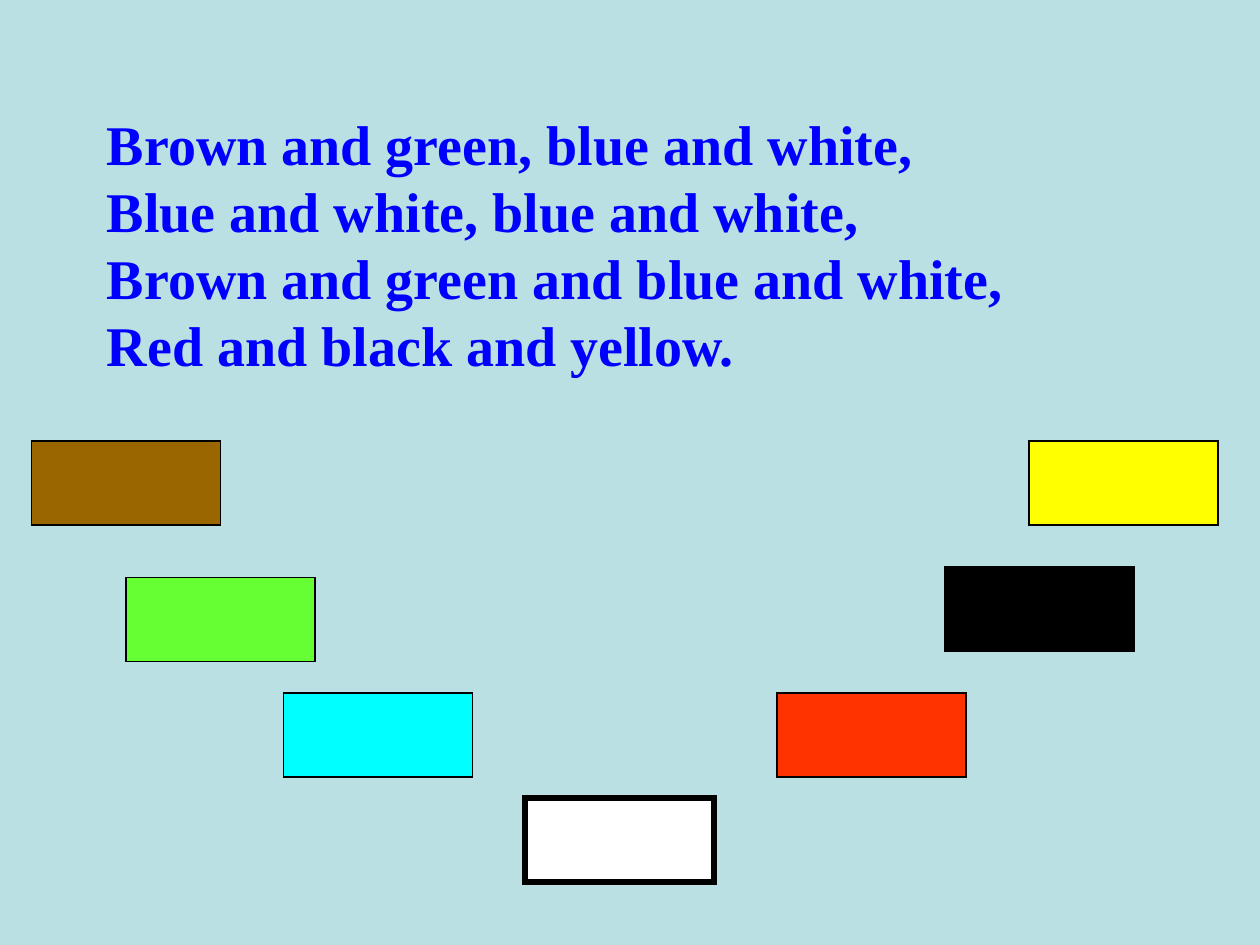
from lxml.etree import SubElement
from pptx import Presentation
from pptx.dml.color import RGBColor
from pptx.enum.shapes import MSO_SHAPE
from pptx.enum.text import MSO_ANCHOR, MSO_AUTO_SIZE, PP_ALIGN
from pptx.oxml.ns import qn
from pptx.util import Pt

COLORS = {
    "background": "BBE0E3",
    "text": "0000FF",
    "outline": "000000",
    "brown": "996600",
    "green": "66FF33",
    "blue": "00FFFF",
    "white": "FFFFFF",
    "red": "FF3300",
    "black": "000000",
    "yellow": "FFFF00",
}


def rgb(name):
    return RGBColor.from_string(COLORS[name])


def add_text(tf, text, *, size, font, color, bold=False, align=PP_ALIGN.LEFT):
    """Fill an empty text frame with one paragraph per line of text."""
    for i, line in enumerate(text.splitlines()):
        p = tf.paragraphs[0] if i == 0 else tf.add_paragraph()
        p.alignment = align
        r = p.add_run()
        r.text = line
        r.font.size = Pt(size)
        r.font.name = font
        r.font.bold = bold
        r.font.color.rgb = rgb(color)


prs = Presentation()
prs.slide_width, prs.slide_height = Pt(720), Pt(540)
s = prs.slides.add_slide(prs.slide_layouts[6])
s.background.fill.solid()
s.background.fill.fore_color.rgb = rgb("background")

# Verse
poem = """Brown and green, blue and white,
Blue and white, blue and white,
Brown and green and blue and white,
Red and black and yellow."""
tf = s.shapes.add_textbox(Pt(54), Pt(58), Pt(642), Pt(162.5)).text_frame
tf.word_wrap = True
tf.auto_size = MSO_AUTO_SIZE.SHAPE_TO_FIT_TEXT
tf.vertical_anchor = MSO_ANCHOR.MIDDLE
add_text(tf, poem, size=32, font="Times New Roman", color="text",
         bold=True, align=PP_ALIGN.JUSTIFY)

# Colour cards in a V: colour, left, top, outline width
cards = [
    ("green", 72, 330, 0.75),
    ("blue", 162, 396, 0.75),
    ("white", 300, 456, 3),
    ("red", 444, 396, 0.75),
    ("black", 540, 324, 0.75),
    ("brown", 18, 252, 0.75),
    ("yellow", 588, 252, 0.75),
]
for color, left, top, outline in cards:
    sp = s.shapes.add_shape(MSO_SHAPE.FLOWCHART_PROCESS,
                            Pt(left), Pt(top), Pt(108), Pt(48))
    sp.shadow.inherit = False
    sp.fill.solid()
    sp.fill.fore_color.rgb = rgb(color)
    sp.line.color.rgb = rgb("outline")
    sp.line.width = Pt(outline)
    # Square outline corners
    ln = sp.element.spPr.find(qn("a:ln"))
    SubElement(ln, qn("a:miter"), lim="800000")

prs.save("out.pptx")
